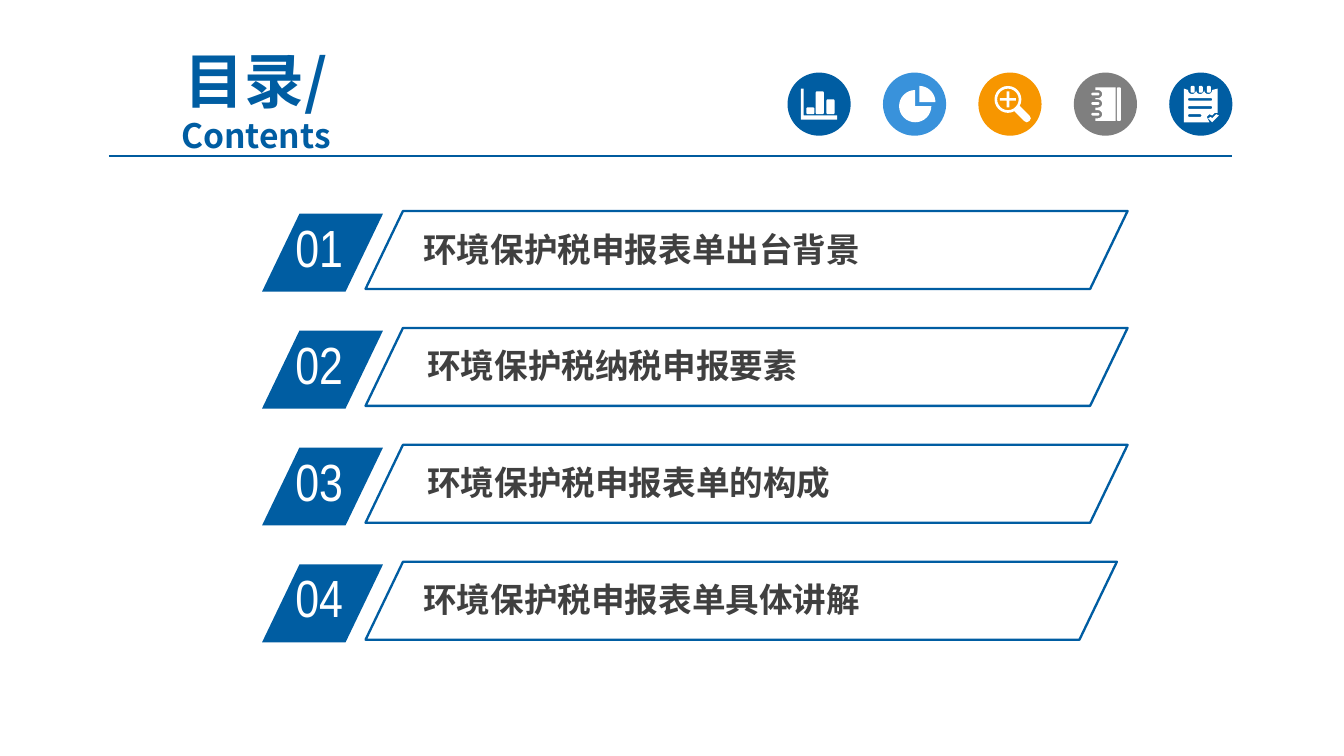
import math
from dataclasses import dataclass

import pptx
import pptx.dml.color
import pptx.enum.shapes
import pptx.enum.text
import pptx.oxml
import pptx.oxml.ns
import pptx.util

Inches, Pt = pptx.util.Inches, pptx.util.Pt
SHAPE = pptx.enum.shapes.MSO_SHAPE
ANCHOR, ALIGN = pptx.enum.text.MSO_ANCHOR, pptx.enum.text.PP_ALIGN


@dataclass(frozen=True)
class Theme:
    """Colours, fonts and type sizes."""
    blue: str = "005DA2"
    rule: str = "005B9E"
    sky: str = "3992DB"
    orange: str = "F79600"
    grey: str = "7F7F7F"
    ink: str = "404040"
    white: str = "FFFFFF"
    cjk: str = "Noto Sans CJK SC"
    narrow: str = "Arial Narrow"
    title: int = 32
    number: int = 28
    label: int = 18


T = Theme()
TOPICS = ["环境保护税申报表单出台背景", "环境保护税纳税申报要素",
          "环境保护税申报表单的构成", "环境保护税申报表单具体讲解"]


def rgb(value):
    """Return a colour from its hex value."""
    return pptx.dml.color.RGBColor.from_string(value)


def apply(obj, formats):
    """Set each attribute of an object from a dict."""
    for name, value in formats.items():
        setattr(obj, name, value)


def add_run(p, text, size, font, color, bold=False):
    """Add a formatted run, with its East Asian font."""
    r = p.add_run()
    r.text = text
    apply(r.font, {"size": Pt(size), "name": font, "bold": bold})
    r.font.color.rgb = rgb(color)
    ea = pptx.oxml.parse_xml(
        f'<a:ea {pptx.oxml.ns.nsdecls("a")} typeface="{font}"/>')
    r.font._element.find(pptx.oxml.ns.qn("a:latin")).addnext(ea)


def add_text(s, box, text, size, font, color, bold=False, inset=(0.1, 0.05)):
    """Add a one-paragraph text box."""
    tf = s.shapes.add_textbox(*map(Inches, box)).text_frame
    x, y = map(Inches, inset)
    apply(tf, {"word_wrap": True, "margin_left": x, "margin_right": x,
               "margin_top": y, "margin_bottom": y})
    add_run(tf.paragraphs[0], text, size, font, color, bold)


def paint(sp, fill=None, line=None, width=1.25):
    """Give a shape a plain fill or outline and no shadow."""
    sp.shadow.inherit = False
    if fill:
        sp.fill.solid()
        sp.fill.fore_color.rgb = rgb(fill)
    else:
        sp.fill.background()
    if line:
        sp.line.color.rgb = rgb(line)
        sp.line.width = Pt(width)
    else:
        sp.line.fill.background()


def arc(cx, cy, radius, start, end, steps=24):
    """Return points along an arc, with angles in degrees clockwise."""
    angles = [math.radians(start + (end - start) * i / steps)
              for i in range(steps + 1)]
    return [(cx + radius * math.cos(a), cy + radius * math.sin(a))
            for a in angles]


def rounded(x, y, w, h, radius=0.01):
    """Return the outline of a rounded rectangle."""
    left, right, top, bottom = x + radius, x + w - radius, y + radius, y + h - radius
    corners = [(right, top, -90), (right, bottom, 0),
               (left, bottom, 90), (left, top, 180)]
    return [pt for cx, cy, a in corners for pt in arc(cx, cy, radius, a, a + 90, 6)]


def bar_chart_glyph():
    """Return the outlines of a bar chart."""
    axis = [(0.1, 0.12), (0.12, 0.12), (0.12, 0.32), (0.37, 0.32),
            (0.37, 0.35), (0.1, 0.35)]
    bars = [(0.14, 0.26), (0.21, 0.14), (0.29, 0.2)]
    return [axis] + [rounded(x, y, 0.06, 0.31 - y) for x, y in bars]


def pie_glyph():
    """Return the outlines of a pie with one slice pulled out."""
    return [[(0.27, 0.22)] + arc(0.27, 0.22, 0.12, -90, 0),
            [(0.24, 0.25)] + arc(0.24, 0.25, 0.12, 0, 270)]


def magnifier_glyph():
    """Return the outlines of a magnifier with a plus sign."""
    cx, cy, long, thin = 0.22, 0.2, 0.06, 0.01
    quarter = [(thin, -long), (thin, -thin), (long, -thin)]
    plus = []
    for _ in range(4):
        plus += [(cx + x, cy + y) for x, y in quarter]
        quarter = [(-y, x) for x, y in quarter]
    handle = [(0.27, 0.29), (0.31, 0.25), (0.38, 0.32), (0.39, 0.34),
              (0.38, 0.36), (0.36, 0.37), (0.34, 0.36)]
    return [arc(cx, cy, 0.1, 0, 360), arc(cx, cy, 0.08, 0, 360), plus, handle]


def notebook_glyph():
    """Return the outlines of a ring-bound notebook."""
    rings = [0.16, 0.23, 0.31]
    cover = [(0.16, 0.11), (0.31, 0.11), (0.31, 0.36), (0.16, 0.36)]
    for y in reversed(rings):
        cover += [(0.16, y + 0.03)] + arc(0.18, y, 0.03, 90, -90) + [(0.16, y - 0.03)]
    return [cover, rounded(0.32, 0.11, 0.03, 0.25)] + [
        rounded(0.13, y - 0.01, 0.06, 0.02) for y in rings]


def checklist_glyph():
    """Return the outlines of a notepad with a tick."""
    rings = [0.17, 0.23, 0.29]
    page = [(0.11, 0.12)]
    for x in rings:
        page += arc(x, 0.13, 0.03, 180, 0)
    page += [(0.36, 0.12), (0.36, 0.3), (0.34, 0.3), (0.32, 0.32),
             (0.3, 0.31), (0.28, 0.33), (0.3, 0.37), (0.11, 0.37)]
    tick = [(0.29, 0.34), (0.31, 0.33), (0.32, 0.34), (0.35, 0.31),
            (0.37, 0.32), (0.32, 0.37)]
    lines = [(0.19, 0.18), (0.25, 0.18), (0.31, 0.1)]
    return [page, tick] + [rounded(x - 0.01, 0.1, 0.03, 0.05) for x in rings] + [
        rounded(0.14, y, w, 0.02) for y, w in lines]


def add_icon(s, box, color, outlines):
    """Draw a round icon with a white glyph."""
    x, y, w, h = box
    paint(s.shapes.add_shape(SHAPE.OVAL, *map(Inches, box)), color)
    contours = [[(Inches(x + px), Inches(y + py)) for px, py in outline]
                for outline in outlines]
    builder = s.shapes.build_freeform(*contours[0][0])
    for i, points in enumerate(contours):
        if i:
            builder.move_to(*points[0])
        builder.add_line_segments(points[1:], close=True)
    paint(builder.convert_to_shape(), T.white)


def add_header(s, box):
    """Place the title, the rule and the row of icons."""
    x, y, w, h = box
    title = s.shapes.title
    apply(title, {"left": Inches(x - 0.14), "top": Inches(y),
                  "width": Inches(2.47), "height": Inches(0.54)})
    tf = title.text_frame
    apply(tf, {"vertical_anchor": ANCHOR.MIDDLE, "word_wrap": True,
               "auto_size": pptx.enum.text.MSO_AUTO_SIZE.NONE})
    p = tf.paragraphs[0]
    p.alignment = ALIGN.CENTER
    add_run(p, "目录/", T.title, T.cjk, T.blue, True)
    p.add_line_break()
    add_run(p, "Contents", T.label, T.cjk, T.blue, True)
    rule = s.shapes.add_connector(
        pptx.enum.shapes.MSO_CONNECTOR.STRAIGHT,
        *map(Inches, (x, y + h, x + w, y + h)))
    rule.line.color.rgb = rgb(T.rule)
    rule.line.width = Pt(0.75)
    rule._element.spPr.append(pptx.oxml.parse_xml(
        f'<a:effectLst {pptx.oxml.ns.nsdecls("a")}/>'))
    icons = [(T.blue, bar_chart_glyph), (T.sky, pie_glyph),
             (T.orange, magnifier_glyph), (T.grey, notebook_glyph),
             (T.blue, checklist_glyph)]
    size, pitch = 0.47, 0.71
    first = x + w - size - pitch * (len(icons) - 1)
    for i, (color, glyph) in enumerate(icons):
        add_icon(s, (first + i * pitch, y + 0.07, size, size), color, glyph())


def add_topic(s, box, number, topic, indent):
    """Place one numbered topic row."""
    x, y, w, h = box
    tab = (x, y + 0.02, 0.9, h)
    frame = (x + 0.77, y, w - 0.77, h)
    for place, formats in [(tab, {"fill": T.blue}), (frame, {"line": T.blue})]:
        sp = s.shapes.add_shape(SHAPE.PARALLELOGRAM, *map(Inches, place))
        sp.adjustments[0] = 0.48
        paint(sp, **formats)
    add_text(s, (x + 0.15, y - 0.02, 0.86, 0.56), f"{number:02}",
             T.number, T.narrow, T.white)
    add_text(s, (x + indent, y + 0.09, 4.7, 0.43), topic,
             T.label, T.cjk, T.ink, True, (0.07, 0.04))


def add_topics(s, box):
    """Place the topic rows at an equal pitch."""
    x, y, w, h = box
    pitch = h / len(TOPICS)
    for i, topic in enumerate(TOPICS):
        width = w - 0.08 if i == len(TOPICS) - 1 else w
        indent = 1.16 if i in (1, 2) else 1.13
        add_topic(s, (x, y + i * pitch, width, 0.58), i + 1, topic, indent)


def main():
    """Build and save the contents slide."""
    prs = pptx.Presentation()
    apply(prs, {"slide_width": Inches(10), "slide_height": Inches(10 * 9 / 16)})
    s = prs.slides.add_slide(prs.slide_layouts[5])
    add_header(s, (0.81, 0.47, 8.36, 0.69))
    add_topics(s, (1.95, 1.57, 6.44, 3.48))
    prs.save("out.pptx")


if __name__ == "__main__":
    main()
